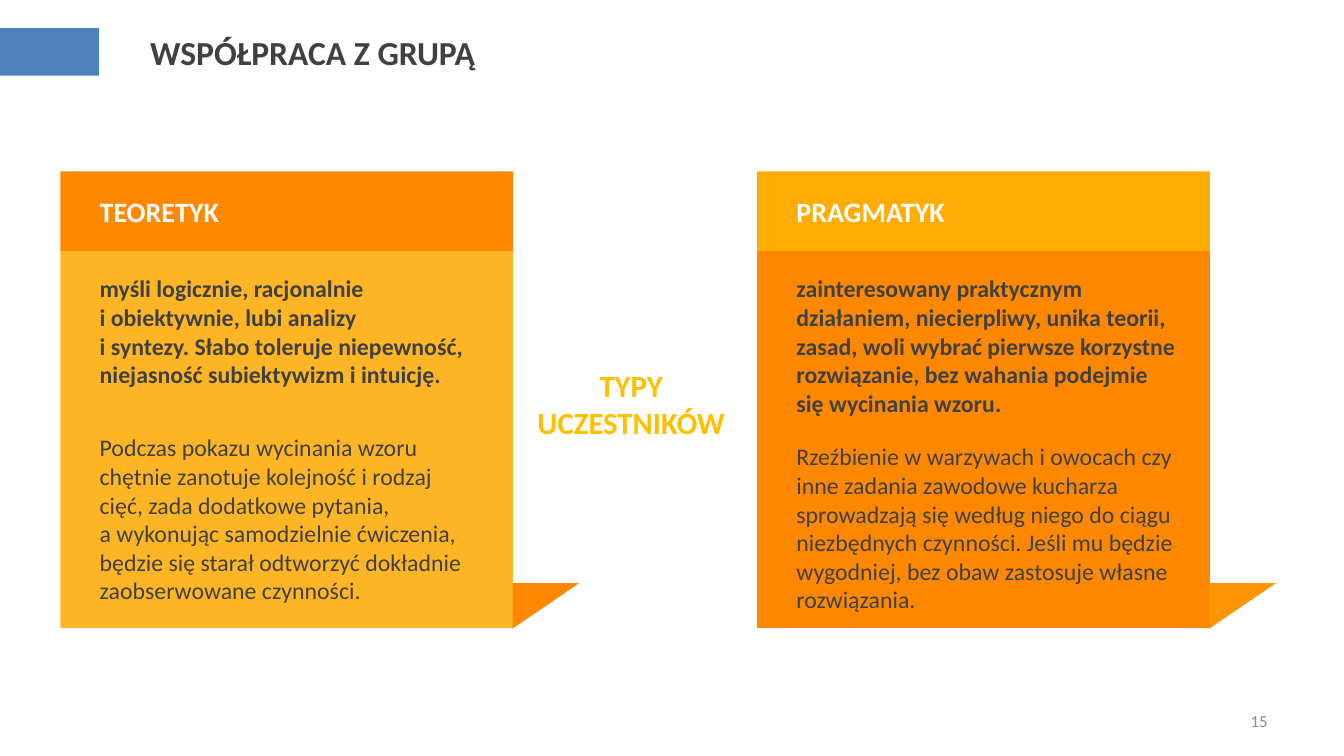
from lxml.etree import SubElement
from pptx import Presentation
from pptx.dml.color import RGBColor
from pptx.enum.shapes import MSO_SHAPE
from pptx.enum.text import MSO_ANCHOR, PP_ALIGN
from pptx.oxml.ns import qn
from pptx.util import Pt

EMU_PER_PX = 9144


def px(length):
    return length * EMU_PER_PX


def color(hex_string):
    return RGBColor.from_string(hex_string)


class SlideBuilder:
    font = "Calibri"
    dark = "404040"
    white = "FFFFFF"
    orange = "FF8803"
    amber = "FFAC06"

    def __init__(self, page):
        self.page = page

    def shape(self, kind, left, top, width, height, fill, rotation=0, opacity=100):
        shape = self.page.shapes.add_shape(
            kind, px(left), px(top), px(width), px(height))
        shape.shadow.inherit = False
        shape.rotation = rotation
        shape.fill.solid()
        shape.fill.fore_color.rgb = color(fill)
        shape.line.fill.background()
        if opacity < 100:
            tint = shape.fill._xPr.find(qn("a:solidFill"))[0]
            SubElement(tint, qn("a:alpha"), val=str(opacity * 1000))
        return shape

    def text(self, left, top, width, height, paragraphs, size, hex_color,
             align=PP_ALIGN.LEFT, anchor=MSO_ANCHOR.MIDDLE, wrap=True):
        box = self.page.shapes.add_textbox(
            px(left), px(top), px(width), px(height))
        frame = box.text_frame
        frame.word_wrap = wrap
        frame.vertical_anchor = anchor
        for index, (words, bold, space_after) in enumerate(paragraphs):
            para = frame.add_paragraph() if index else frame.paragraphs[0]
            para.text = words
            para.alignment = align
            para.space_after = Pt(space_after)
            para.font.name = self.font
            para.font.size = Pt(size)
            para.font.bold = bold
            para.font.color.rgb = color(hex_color)
        return box

    def card(self, left, heading, traits, example, gap, text_width,
             header_fill, body_fill, fold_fill, opacity=100):
        top, width, header_height, body_height = 170, 449, 79, 374
        fold_width, fold_height = 66, 45
        body_top = top + header_height
        bottom = body_top + body_height
        turn = (fold_width - fold_height) // 2
        text_left = left + 29
        self.shape(MSO_SHAPE.RECTANGLE, left, body_top, width, body_height,
                   body_fill, opacity=opacity)
        self.shape(MSO_SHAPE.RECTANGLE, left, top, width, header_height, header_fill)
        self.shape(MSO_SHAPE.RIGHT_TRIANGLE, left + width + turn,
                   bottom - fold_height - turn, fold_height, fold_width,
                   fold_fill, rotation=90)
        self.text(text_left, top, 285, header_height,
                  [(heading, True, 0)], 20, self.white)
        self.text(text_left, body_top + 18, text_width, 350,
                  [(traits, True, gap), (example, False, 0)],
                  17, self.dark, anchor=MSO_ANCHOR.TOP)


def main():
    deck = Presentation()
    deck.slide_width = px(1333)
    deck.slide_height = px(750)
    builder = SlideBuilder(deck.slides.add_slide(deck.slide_layouts[6]))

    builder.shape(MSO_SHAPE.RECTANGLE, 0, 28, 98, 47, "4F81BD")
    builder.text(139, 21, 599, 62, [("WSPÓŁPRACA Z GRUPĄ", True, 0)],
                 24, builder.dark)
    builder.card(
        60, "TEORETYK",
        "myśli logicznie, racjonalnie\ni obiektywnie, lubi analizy\n"
        "i syntezy. Słabo toleruje niepewność, niejasność subiektywizm i intuicję.",
        "Podczas pokazu wycinania wzoru chętnie zanotuje kolejność i rodzaj cięć, "
        "zada dodatkowe pytania,\na wykonując samodzielnie ćwiczenia, będzie się "
        "starał odtworzyć dokładnie zaobserwowane czynności.",
        32, 387, builder.orange, builder.amber, builder.orange, opacity=87)
    builder.card(
        751, "PRAGMATYK",
        "zainteresowany praktycznym działaniem, niecierpliwy, unika teorii, zasad, "
        "woli wybrać pierwsze korzystne rozwiązanie, bez wahania podejmie się "
        "wycinania wzoru.",
        "Rzeźbienie w warzywach i owocach czy inne zadania zawodowe kucharza "
        "sprowadzają się według niego do ciągu niezbędnych czynności. Jeśli mu "
        "będzie wygodniej, bez obaw zastosuje własne rozwiązania.",
        18, 399, builder.amber, builder.orange, "FF9405")
    builder.text(522, 359, 208, 84, [("TYPY\nUCZESTNIKÓW", True, 0)], 22, "FFC000",
                 align=PP_ALIGN.CENTER, anchor=MSO_ANCHOR.TOP, wrap=False)
    builder.text(956, 695, 311, 40, [("15", False, 0)], 12, "898989",
                 align=PP_ALIGN.RIGHT)

    deck.save("out.pptx")


if __name__ == "__main__":
    main()
